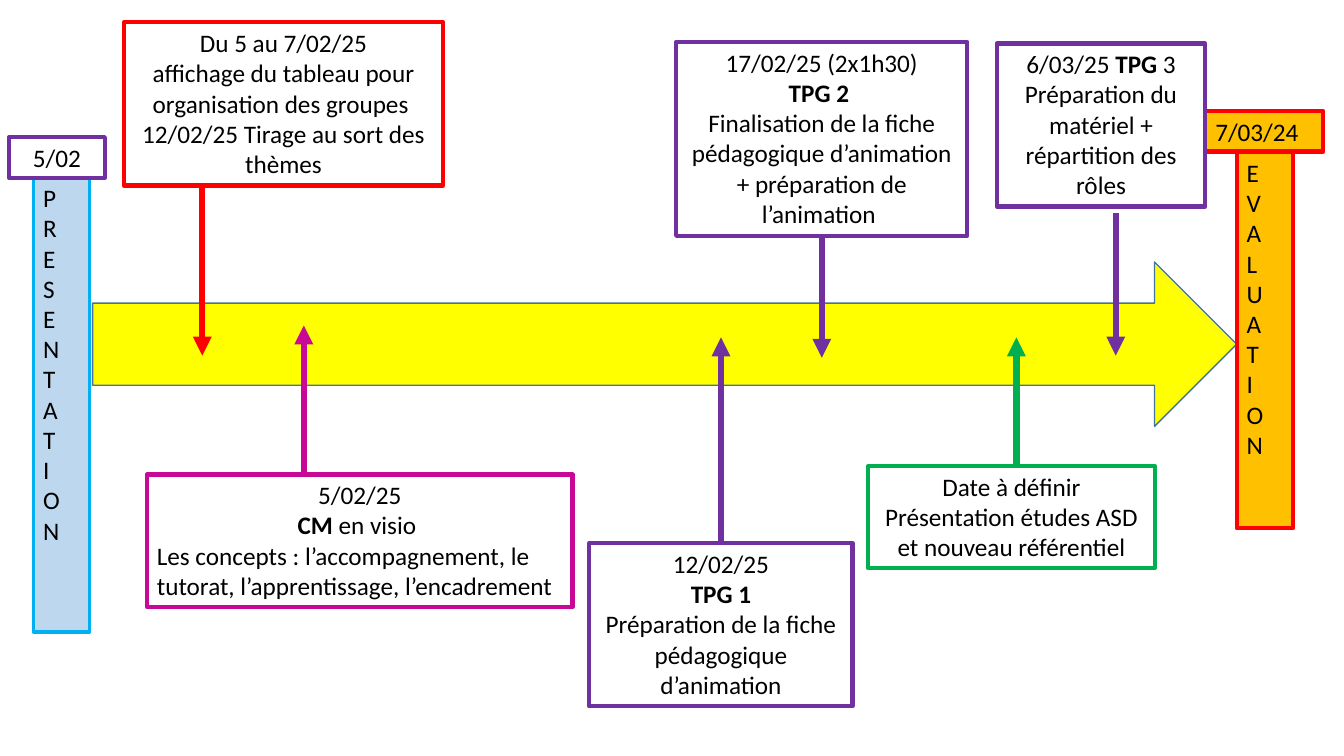
from collections import namedtuple

from pptx import Presentation
from pptx.dml.color import RGBColor
from pptx.enum.shapes import MSO_CONNECTOR, MSO_SHAPE
from pptx.enum.text import MSO_ANCHOR, MSO_AUTO_SIZE, PP_ALIGN
from pptx.oxml.ns import qn
from pptx.util import Pt
from lxml.etree import SubElement

Box = namedtuple("Box", "left top width height")
Stem = namedtuple("Stem", "offset gap tip")

BLACK, YELLOW, RED, PURPLE = "000000", "FFFF00", "FF0000", "7030A0"
GREEN, PINK, ORANGE, BLUE, PALE_BLUE = "00B050", "C80896", "FFC000", "00B0F0", "BDD7EE"
LEFT, CENTER = PP_ALIGN.LEFT, PP_ALIGN.CENTER

EVENTS = [
    (Box(712, 31, 149, 116.6), PURPLE, Stem(85, 4.5, 254), [
        (CENTER, [("6/03/25 ", False), ("TPG ", True), ("3", False)]),
        (CENTER, [("Préparation du matériel + répartition des rôles", False)])]),
    (Box(483, 30, 208, 138.5), PURPLE, Stem(104, 0, 255.5), [
        (CENTER, [("17/02/25 (2x1h30)", False)]),
        (CENTER, [("TPG 2 ", True)]),
        (CENTER, [("Finalisation de la fiche pédagogique d’animation + préparation de l’animation ", False)])]),
    (Box(421, 388, 188, 116.6), PURPLE, Stem(94, 0, 241), [
        (CENTER, [("12/02/25", False)]),
        (CENTER, [("TPG 1", True)]),
        (CENTER, [("Préparation de la fiche pédagogique d’animation", False)])]),
    (Box(620, 333, 205, 72.7), GREEN, Stem(106, 0, 241), [
        (CENTER, [("Date à définir", False)]),
        (CENTER, [("Présentation études ASD et nouveau référentiel", False)])]),
    (Box(105, 339, 304, 94.5), PINK, Stem(112, 0, 232.5), [
        (CENTER, [("5/02/25", False)]),
        (CENTER, [("CM ", True), ("en visio ", False)]),
        (LEFT, [("Les concepts : l’accompagnement, le tutorat, l’apprentissage, l’encadrement", False)])]),
    (Box(88.5, 16, 228, 116.6), RED, Stem(56, 0, 254), [
        (CENTER, [("Du 5 au 7/02/25", False)]),
        (CENTER, [("affichage du tableau pour organisation des groupes ", False)]),
        (CENTER, [("12/02/25 Tirage au sort des thèmes", False)])]),
]


def colour(code):
    """Return the colour for a hex string."""
    return RGBColor.from_string(code)


def add_outline(page, kind, box, line, weight, fill=None):
    """Add a flat preset shape in the given box."""
    shape = page.shapes.add_shape(kind, *(Pt(length) for length in box))
    shape.shadow.inherit = False
    if fill:
        shape.fill.solid()
        shape.fill.fore_color.rgb = colour(fill)
    else:
        shape.fill.background()
    shape.line.color.rgb = colour(line)
    shape.line.width = Pt(weight)
    return shape


def add_label(page, box, line, paragraphs, fill=None, weight=3):
    """Add a framed text built from aligned paragraphs of spans."""
    shape = add_outline(page, MSO_SHAPE.RECTANGLE, box, line, weight, fill)
    frame = shape.text_frame
    frame.word_wrap = True
    frame.auto_size = MSO_AUTO_SIZE.SHAPE_TO_FIT_TEXT
    frame.vertical_anchor = MSO_ANCHOR.TOP
    for index, (alignment, spans) in enumerate(paragraphs):
        para = frame.add_paragraph() if index else frame.paragraphs[0]
        para.alignment = alignment
        for text, bold in spans:
            span = para.add_run()
            span.text = text
            span.font.name = "Calibri"
            span.font.size = Pt(18)
            span.font.bold = bold
            span.font.color.rgb = colour(BLACK)
    return shape


def add_event(page, box, line, stem, paragraphs):
    """Add an event label and the arrow from it to the timeline."""
    label = add_label(page, box, line, paragraphs)
    above = box.top < stem.tip
    start = box.top + box.height + stem.gap if above else box.top - stem.gap
    x = Pt(box.left + stem.offset)
    arrow = page.shapes.add_connector(MSO_CONNECTOR.STRAIGHT, x, Pt(start), x, Pt(stem.tip))
    if stem.offset == box.width / 2 and not stem.gap:
        arrow.begin_connect(label, 2 if above else 0)
    arrow.line.color.rgb = colour(line)
    arrow.line.width = Pt(4.5)
    SubElement(arrow.line._get_or_add_ln(), qn("a:tailEnd"), type="triangle")
    SubElement(arrow.element.spPr, qn("a:effectLst"))


def add_milestone(page, box, word, line, weight, fill):
    """Add a tall banner whose letters are stacked."""
    banner = add_label(page, box, line, [(LEFT, [(word, False)])], fill, weight)
    banner.element.txBody.find(qn("a:bodyPr")).set("vert", "wordArtVert")


def add_date(page, box, date, line, alignment, fill=None):
    """Add the date that heads a milestone."""
    add_label(page, box, line, [(alignment, [(date, False)])], fill)


def build_timeline(page):
    """Place the timeline, its milestones and its events."""
    add_outline(page, MSO_SHAPE.RIGHT_ARROW, Box(66.2, 187.2, 817.2, 117.4), "43739E", 1, YELLOW)
    add_milestone(page, Box(883.4, 108.7, 40.3, 268.6), "EVALUATION", RED, 3, ORANGE)
    add_date(page, Box(861, 79.2, 84.2, 29), "7/03/24", RED, LEFT, ORANGE)
    for event in EVENTS:
        add_event(page, *event)
    add_milestone(page, Box(23.8, 126.7, 40.3, 324.7), "PRESENTATION", BLUE, 2.25, PALE_BLUE)
    add_date(page, Box(6.5, 98, 68.4, 29), "5/02", PURPLE, CENTER)


def main():
    """Build and save the deck."""
    deck = Presentation()
    deck.slide_width, deck.slide_height = Pt(960), Pt(540)
    page = deck.slides.add_slide(deck.slide_layouts[6])
    build_timeline(page)
    deck.save("out.pptx")


if __name__ == "__main__":
    main()
